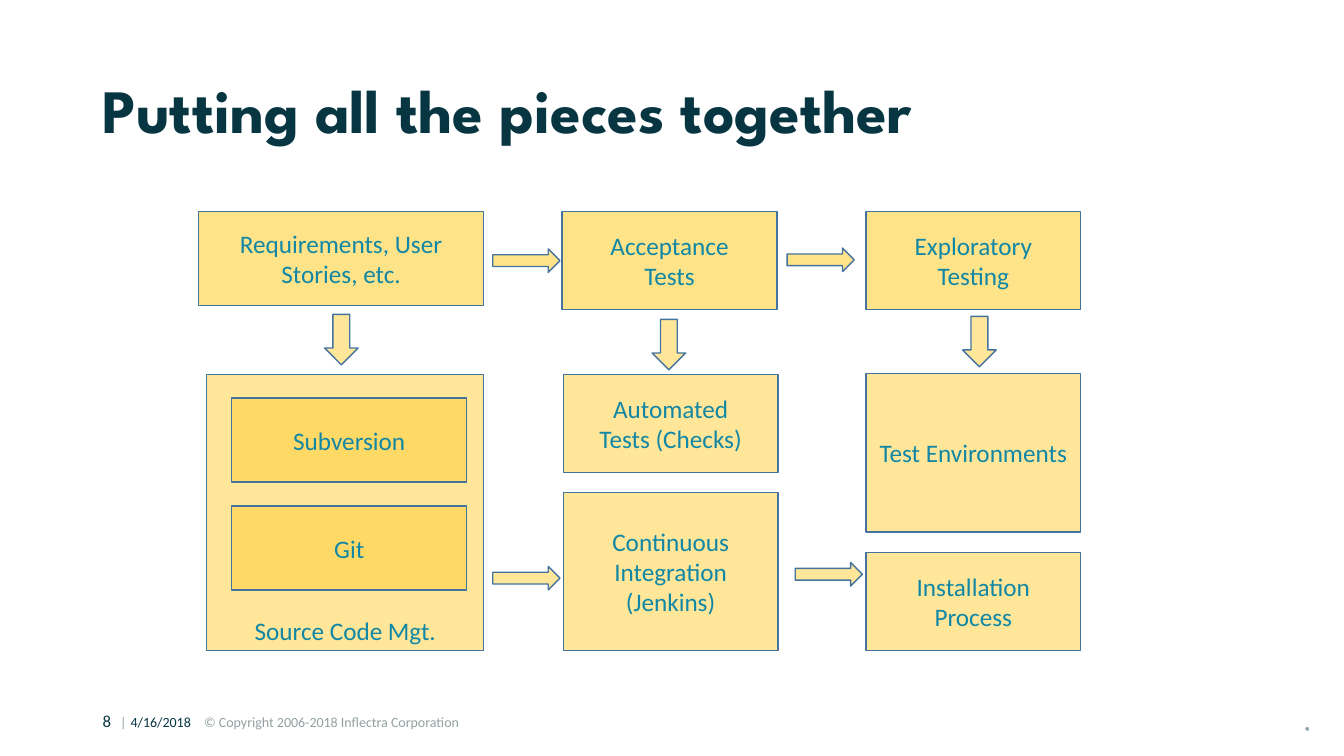
from lxml import etree
from pptx import Presentation
from pptx.dml.color import RGBColor
from pptx.enum.shapes import MSO_SHAPE
from pptx.enum.text import MSO_ANCHOR, PP_ALIGN
from pptx.oxml.ns import qn
from pptx.util import Pt

# Content
TITLE = "Putting all the pieces together"
FOOTER = [  # text, size, colour
    ("8", 12, "ink"),
    ("\t|\t", 10, "grey"),
    ("4/16/2018", 10, "ink"),
    ("\t© Copyright 2006-2018 Inflectra Corporation", 10, "grey"),
]
FOOTER_TABS = (12.5, 20, 72.5)
MARK = "®"

COLORS = {
    "ink": "073642", "grey": "93A1A1", "label": "1187A5", "line": "43739E",
    "top": "FFE389", "body": "FFE699", "inner": "FFD966",
}

# Grid
COL2, COL3, COL_W = 402.3, 618.5, 153.5
ROW1, ROW2, BOTTOM = 151.2, 267.6, 464.8
SHORT, TALL = 70, 113
INNER_X, INNER_Y, INNER_W, INNER_H, INNER_STEP = 165.6, 284.4, 167.8, 60, 77

# Boxes: paragraphs, fill, left, top, width, height
BOXES = [
    (["Source Code Mgt."], "body", 147.6, ROW2, 198, BOTTOM - ROW2),
    (["Requirements, User Stories, etc."], "top", 141.8, ROW1, 203.8, 67.2),
    (["Acceptance", "Tests"], "top", COL2 - 0.8, ROW1, COL_W, SHORT),
    (["Exploratory", "Testing"], "top", COL3, ROW1, COL_W, SHORT),
    (["Automated", "Tests (Checks)"], "body", COL2, ROW2, COL_W, SHORT),
    (["Continuous Integration", "(Jenkins)"], "body", COL2, BOTTOM - TALL, COL_W, TALL),
    (["Test Environments"], "body", COL3, ROW2 - 0.6, COL_W, TALL),
    (["Installation", "Process"], "body", COL3, BOTTOM - SHORT, COL_W, SHORT),
]
BOXES += [([name], "inner", INNER_X, INNER_Y + i * INNER_STEP, INNER_W, INNER_H)
          for i, name in enumerate(["Subversion", "Git"])]

# Arrows: fill, left, top
RIGHT_ARROWS = [("top", 352, 177.8), ("top", 562.2, 177.2),
                ("body", 352, 404.6), ("body", 568, 401.8)]
DOWN_ARROWS = [("body", 231.8, 224.6), ("body", 465.8, 228.2), ("body", 687.6, 226)]


def rgb(name):
    return RGBColor.from_string(COLORS[name])


def add_run(p, text, size, color, face="Calibri", bold=False):
    r = p.add_run()
    r.text = text
    r.font.size = Pt(size)
    r.font.name = face
    r.font.bold = bold
    r.font.color.rgb = rgb(color)
    return r


def add_text(slide, x, y, w, h):
    tf = slide.shapes.add_textbox(Pt(x), Pt(y), Pt(w), Pt(h)).text_frame
    tf.word_wrap = True
    return tf


def add_shape(slide, kind, fill, x, y, w, h):
    sp = slide.shapes.add_shape(kind, Pt(x), Pt(y), Pt(w), Pt(h))
    sp.shadow.inherit = False
    sp.fill.solid()
    sp.fill.fore_color.rgb = rgb(fill)
    sp.line.color.rgb = rgb("line")
    sp.line.width = Pt(1)
    return sp


def add_box(slide, lines, fill, x, y, w, h):
    tf = add_shape(slide, MSO_SHAPE.RECTANGLE, fill, x, y, w, h).text_frame
    tf.word_wrap = True
    has_inner = lines == ["Source Code Mgt."]
    tf.vertical_anchor = MSO_ANCHOR.BOTTOM if has_inner else MSO_ANCHOR.MIDDLE
    for i, line in enumerate(lines):
        p = tf.add_paragraph() if i else tf.paragraphs[0]
        p.alignment = PP_ALIGN.CENTER
        add_run(p, line, 18, "label")


def add_footer(slide):
    p = add_text(slide, 66.2, 504, 538, 21.6).paragraphs[0]
    tabs = etree.SubElement(p._p.get_or_add_pPr(), qn("a:tabLst"))
    for pos in FOOTER_TABS:
        etree.SubElement(tabs, qn("a:tab"), pos=str(int(Pt(pos))), algn="l")
    for text, size, color in FOOTER:
        add_run(p, text, size, color)

    # Registered mark, raised
    tf = add_text(slide, 932.4, 515.5, 13, 17.3)
    tf.margin_left = tf.margin_right = tf.margin_top = tf.margin_bottom = 0
    r = add_run(tf.paragraphs[0], MARK, 14, "ink")
    r._r.get_or_add_rPr().set("baseline", "30000")


def main():
    prs = Presentation()
    prs.slide_width, prs.slide_height = Pt(960), Pt(540)
    slide = prs.slides.add_slide(prs.slide_layouts[6])

    # Title
    tf = add_text(slide, 66.2, 28.8, 828, 104.4)
    tf.vertical_anchor = MSO_ANCHOR.MIDDLE
    p = tf.paragraphs[0]
    p.line_spacing = 0.9
    add_run(p, TITLE, 44, "ink", "League Spartan", True)

    # Diagram
    for box in BOXES:
        add_box(slide, *box)
    for arrow in RIGHT_ARROWS:
        add_shape(slide, MSO_SHAPE.RIGHT_ARROW, *arrow, 48, 16.8)
    for arrow in DOWN_ARROWS:
        add_shape(slide, MSO_SHAPE.DOWN_ARROW, *arrow, 24, 36)

    add_footer(slide)
    prs.save("out.pptx")


if __name__ == "__main__":
    main()
